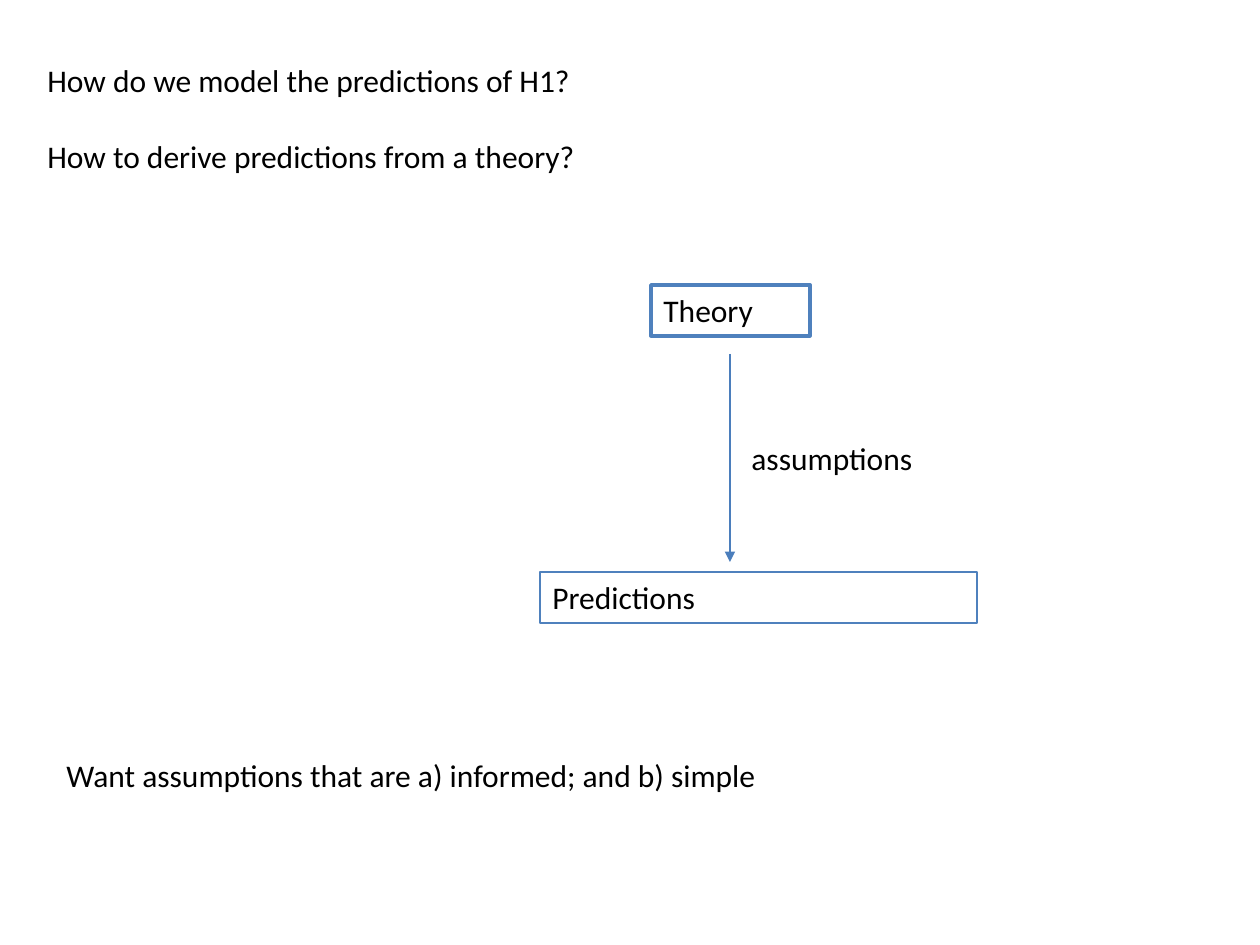
import pptx
import pptx.dml.color
import pptx.enum.shapes
import pptx.enum.text
import pptx.oxml.ns
import pptx.util
from lxml import etree

PX = 914400 // 126
FONT = "Calibri"
BLUE = "4F81BD"
ARROW_BLUE = "4B7EBC"
BLACK = "000000"


def px(*lengths):
    """Turn pixel lengths into EMU."""
    return [pptx.util.Emu(n * PX) for n in lengths]


def color(value):
    """Return the colour of a hex string."""
    return pptx.dml.color.RGBColor.from_string(value)


def write(sp, lines, gap=0):
    """Fill a shape with left-aligned paragraphs, gap points apart."""
    tf = sp.text_frame
    tf.word_wrap = True
    tf.vertical_anchor = pptx.enum.text.MSO_ANCHOR.TOP
    tf.text = "\n".join(lines)
    for i, p in enumerate(tf.paragraphs):
        p.alignment = pptx.enum.text.PP_ALIGN.LEFT
        p.space_before = pptx.util.Pt(gap if i else 0)
        p.font.name = FONT
        p.font.size = pptx.util.Pt(18)
        p.font.color.rgb = color(BLACK)


def add_text(s, box, lines, gap=0):
    """Add a plain text box."""
    write(s.shapes.add_textbox(*px(*box)), lines, gap)


def add_box(s, box, label, width):
    """Add an outlined, unfilled rectangle with a label."""
    sp = s.shapes.add_shape(pptx.enum.shapes.MSO_SHAPE.RECTANGLE, *px(*box))
    sp.shadow.inherit = False
    sp.fill.background()
    sp.line.color.rgb = color(BLUE)
    sp.line.width = pptx.util.Pt(width)
    write(sp, [label])


def add_arrow(s, x, top, bottom):
    """Add a downward arrow."""
    straight = pptx.enum.shapes.MSO_CONNECTOR.STRAIGHT
    sp = s.shapes.add_connector(straight, *px(x, top, x, bottom))
    sp.line.color.rgb = color(ARROW_BLUE)
    sp.line.width = pptx.util.Pt(1.5)
    qn = pptx.oxml.ns.qn
    etree.SubElement(sp.line._get_or_add_ln(), qn("a:tailEnd"), type="triangle")
    etree.SubElement(sp._element.spPr, qn("a:effectLst"))


def main():
    """Build the slide and save it."""
    prs = pptx.Presentation()
    prs.slide_width, prs.slide_height = px(1260, 945)
    s = prs.slides.add_slide(prs.slide_layouts[6])
    questions = [
        "How do we model the predictions of H1?",
        "How to derive predictions from a theory?",
    ]
    add_text(s, (35, 55, 1160, 165), questions, gap=22)
    add_box(s, (540, 572, 437, 51), "Predictions", 0.75)
    add_box(s, (651, 285, 159, 51), "Theory", 2)
    add_arrow(s, 730, 354, 562)
    add_text(s, (739, 433, 208, 51), ["assumptions"])
    add_text(s, (54, 750, 804, 51),
             ["Want assumptions that are a) informed; and b) simple"])
    prs.save("out.pptx")


if __name__ == "__main__":
    main()
